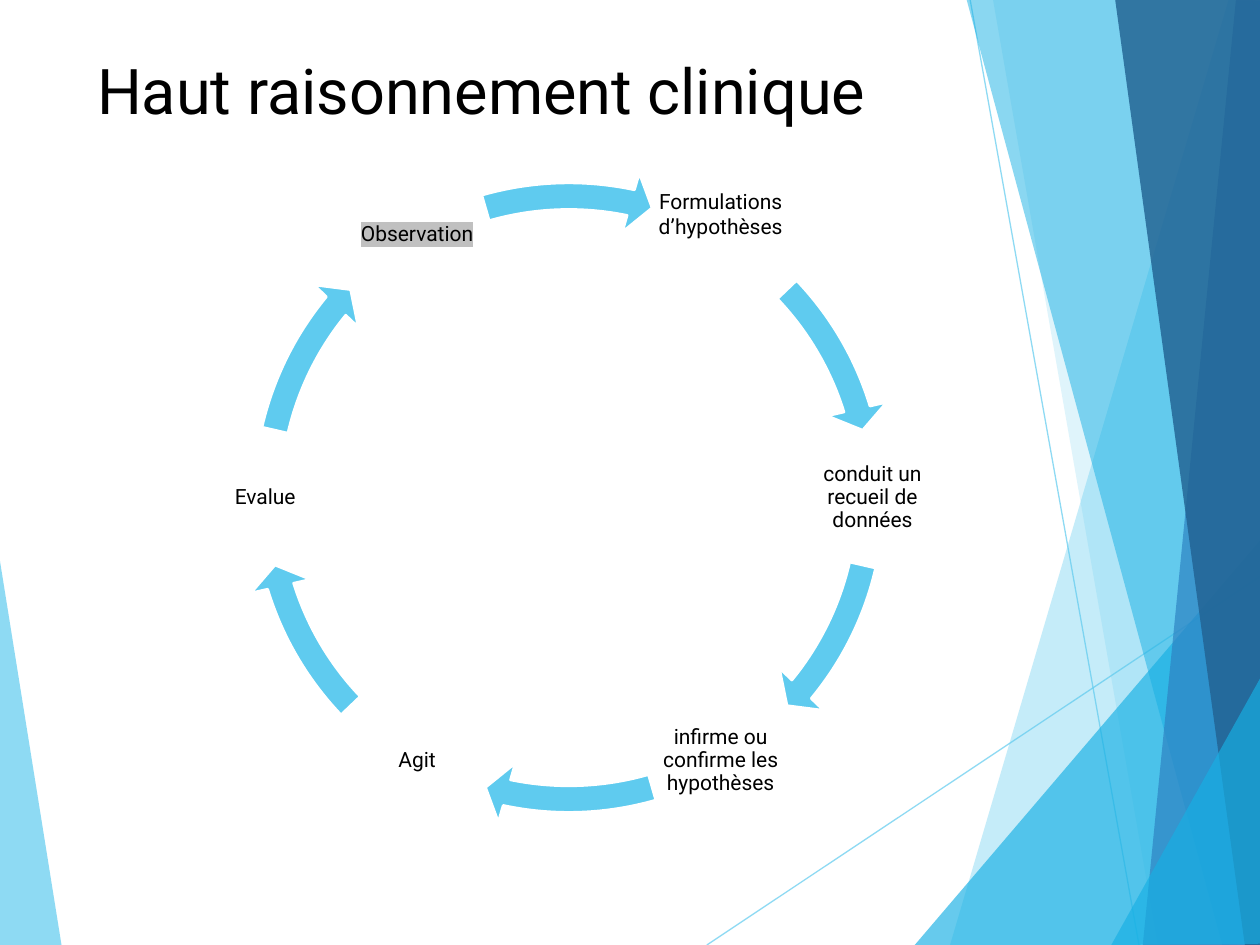
import math
from lxml import etree
from pptx import Presentation, util as u
from pptx.dml.color import RGBColor
from pptx.enum import shapes as sh, text as tx
from pptx.oxml.ns import qn

SKY = RGBColor(0x5F, 0xCB, 0xEF)
CYAN = RGBColor(0x17, 0xB0, 0xE4)
BLUE = RGBColor(0x2E, 0x83, 0xC3)
NAVY = RGBColor(0x22, 0x62, 0x92)
BLACK = RGBColor(0, 0, 0)
WHITE = RGBColor(255, 255, 255)
FONT = "Roboto"
W, H = 10, 7.5

TITLE = "Haut raisonnement clinique"
# Step, then start and end angle in degrees of the arrow that follows it
STEPS = [
    ("Formulations d’hypothèses", 316.36, 342.91),
    ("conduit un recueil de données", 12.93, 39.47),
    ("infirme ou confirme les hypothèses", 73.96, 101.87),
    ("Agit", 136.36, 162.91),
    ("Evalue", 192.93, 219.47),
    ("Observation", 253.96, 281.87),
]
MARKED = "Observation"

# Background facets: colour, opacity in percent, corners in inches
LEFT = (SKY, 70, [(-0.01, 4.39), (0.49, 7.51), (-0.01, H)])
RAYS = [((5.61, H), (10.01, 4.57)), ((7.7, 0), (9.04, H))]
RIGHT = [
    (SKY, 36, [(9.75, 0), (7.54, H), (10.02, 7.51), (10.01, 0.01)]),
    (SKY, 20, [(7.88, -0.01), (9.19, H), (10.01, H), (10.01, -0.01)]),
    (CYAN, 66, [(7.26, H), (10, 4.29), (10.01, H)]),
    (CYAN, 50, [(7.67, -0.01), (9.7, H), (10.01, 7.49), (10.01, -0.01)]),
    (BLUE, 70, [(9.81, -0.01), (9.07, H), (10.01, H), (10, -0.01)]),
    (NAVY, 82, [(8.85, -0.01), (9.88, H), (10.02, H), (10, -0.01)]),
    (CYAN, 66, [(8.82, H), (10.02, 5.35), (10.02, 7.49)]),
]

# Cycle: centre, radius of the labels, sides of label and arrow boxes
CX, CY, RADIUS = 4.515, 3.95, 2.41
LABEL, RING = 1.08, 5.27


def fade(shape, share):
    clr = next(shape._element.spPr.iter(qn("a:srgbClr")))
    etree.SubElement(clr, qn("a:alpha"), val=str(share * 1000))


def style(para, size):
    for run in para.runs:
        run.font.size = u.Pt(size)
        run.font.name = FONT
        run.font.color.rgb = BLACK


def facet(slide, color, share, pts):
    grid = [(round(x * 100), round(y * 100)) for x, y in pts]
    pen = slide.shapes.build_freeform(*grid[0], scale=u.Inches(0.01))
    pen.add_line_segments(grid[1:], close=True)
    shape = pen.convert_to_shape()
    shape.shadow.inherit = False
    shape.fill.solid()
    shape.fill.fore_color.rgb = color
    shape.line.fill.background()
    fade(shape, share)


def ray(slide, start, end):
    line = slide.shapes.add_connector(
        sh.MSO_CONNECTOR.STRAIGHT, *map(u.Inches, start + end))
    line.line.color.rgb = SKY
    line.line.width = u.Pt(0.75)
    fade(line, 70)
    etree.SubElement(line._element.spPr, qn("a:effectLst"))


def square(x, y, side):
    return [u.Inches(v) for v in (x - side / 2, y - side / 2, side, side)]


def label(slide, words, x, y, first):
    frame = slide.shapes.add_textbox(*square(x, y, LABEL)).text_frame
    frame.word_wrap = True
    frame.vertical_anchor = tx.MSO_ANCHOR.MIDDLE
    frame.margin_left = frame.margin_right = u.Inches(0.02)
    frame.margin_top = u.Inches(0.02)
    # The first label sits a little above the middle of its box
    frame.margin_bottom = u.Inches(0.36 if first else 0.02)
    para = frame.paragraphs[0]
    para.text = words
    para.alignment = tx.PP_ALIGN.CENTER
    para.line_spacing = 1.0 if first else 0.9
    style(para, 12)
    if words == MARKED:
        mark = etree.Element(qn("a:highlight"))
        etree.SubElement(mark, qn("a:srgbClr"), val="C0C0C0")
        para.runs[0]._r.rPr.find(qn("a:solidFill")).addnext(mark)


def arrow(slide, start, end):
    shape = slide.shapes.add_shape(
        sh.MSO_SHAPE.CIRCULAR_ARROW, *square(CX, CY, RING))
    # Angles are stored as 60000ths of a degree, adjustments as 100000ths
    for i, val in enumerate((0.04, 2.5, end * 0.6, start * 0.6, 0.046)):
        shape.adjustments[i] = val
    shape.shadow.inherit = False
    shape.fill.solid()
    shape.fill.fore_color.rgb = SKY
    shape.line.color.rgb = WHITE
    shape.line.width = u.Pt(1.5)


def main():
    prs = Presentation()
    prs.slide_width, prs.slide_height = u.Inches(W), u.Inches(H)
    slide = prs.slides.add_slide(prs.slide_layouts[5])

    # Title
    title = slide.shapes.title
    title.left, title.top = u.Inches(0.67), u.Inches(0.36)
    title.width, title.height = u.Inches(6.94), u.Inches(0.94)
    frame = title.text_frame
    frame.text = TITLE
    frame.auto_size = tx.MSO_AUTO_SIZE.NONE
    frame.vertical_anchor = tx.MSO_ANCHOR.TOP
    frame.paragraphs[0].alignment = tx.PP_ALIGN.LEFT
    style(frame.paragraphs[0], 36)

    # Background
    facet(slide, *LEFT)
    for start, end in RAYS:
        ray(slide, start, end)
    for part in RIGHT:
        facet(slide, *part)

    # Cycle, clockwise from the upper right
    for i, (words, start, end) in enumerate(STEPS):
        turn = math.radians(360 / len(STEPS) * (i - 1))
        x, y = CX + RADIUS * math.cos(turn), CY + RADIUS * math.sin(turn)
        label(slide, words, x, y, i == 0)
        arrow(slide, start, end)

    prs.save("out.pptx")


if __name__ == "__main__":
    main()
